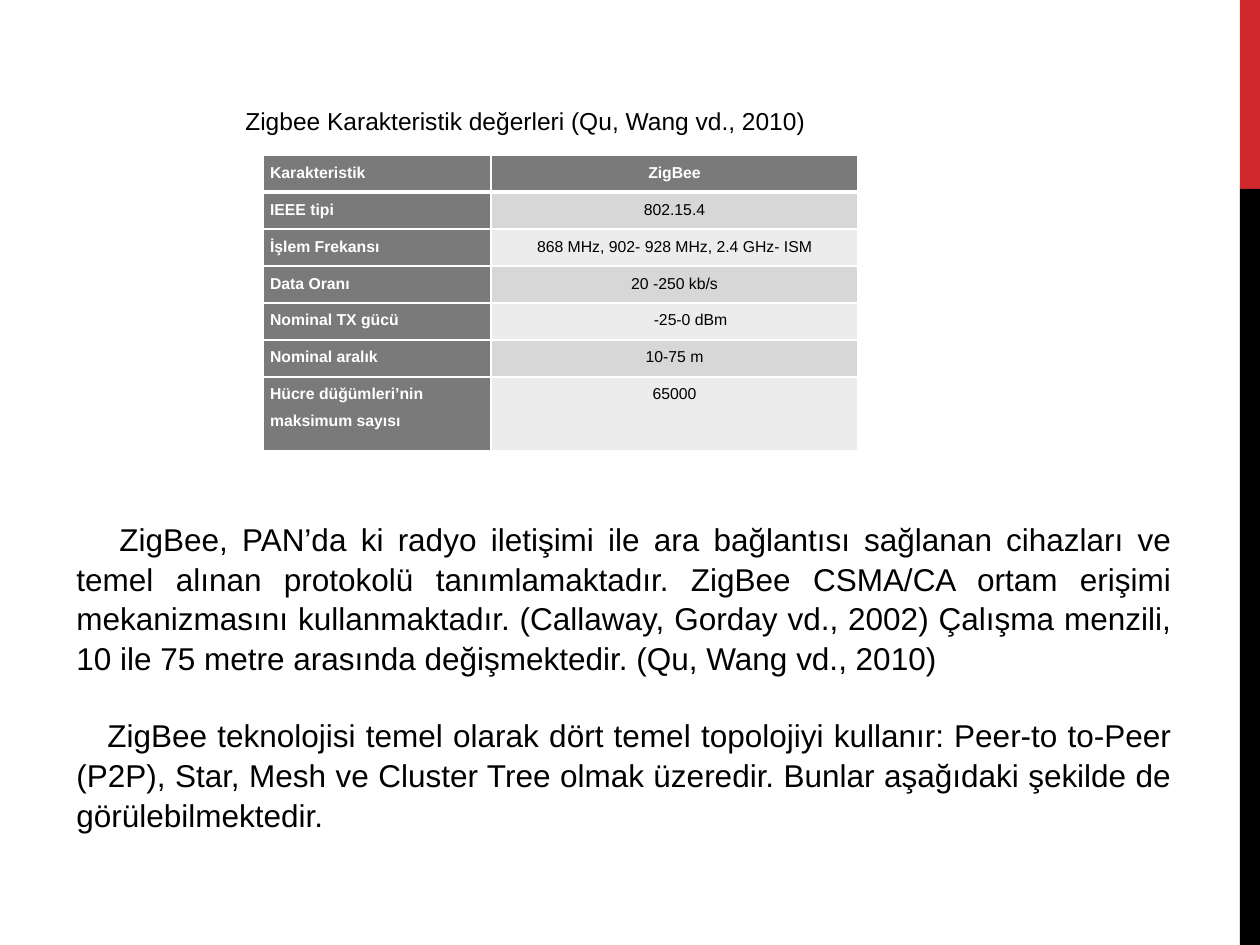
from dataclasses import dataclass
from lxml import etree
from pptx import Presentation
from pptx.dml.color import RGBColor
from pptx.enum.shapes import MSO_SHAPE
from pptx.enum.text import PP_ALIGN
from pptx.oxml.ns import qn
from pptx.util import Pt

RECT = MSO_SHAPE.RECTANGLE
LEFT, CENTER, JUSTIFY = PP_ALIGN.LEFT, PP_ALIGN.CENTER, PP_ALIGN.JUSTIFY
PX = 914400 // 126


@dataclass(frozen=True)
class Theme:
    font: str = "Arial"
    red: str = "D1282E"
    black: str = "000000"
    white: str = "FFFFFF"
    heading: str = "7A7A7A"
    band_dark: str = "D7D7D7"
    band_light: str = "ECECEC"
    caption_size: int = 14
    body_size: int = 18
    table_size: int = 9


theme = Theme()


def style_paragraph(paragraph, size, color, align, spacing, bold=False):
    paragraph.alignment = align
    paragraph.line_spacing = spacing
    for run in paragraph.runs:
        run.font.name = theme.font
        run.font.size = Pt(size)
        run.font.bold = bold
        run.font.color.rgb = RGBColor.from_string(color)


def add_border(cell, side, width):
    line = etree.SubElement(cell._tc.get_or_add_tcPr(), qn(f"a:ln{side}"), w=str(Pt(width)))
    fill = etree.SubElement(line, qn("a:solidFill"))
    etree.SubElement(fill, qn("a:srgbClr"), val=theme.white)


prs = Presentation()
prs.slide_width, prs.slide_height = 1260 * PX, 945 * PX
slide = prs.slides.add_slide(prs.slide_layouts[6])

for top, height, color in [(0, 189, theme.red), (189, 756, theme.black)]:
    side_bar = slide.shapes.add_shape(RECT, 1240 * PX, top * PX, 20 * PX, height * PX)
    side_bar.shadow.inherit = False
    side_bar.fill.solid()
    side_bar.fill.fore_color.rgb = RGBColor.from_string(color)
    side_bar.line.fill.background()

characteristics = [
    ("Karakteristik", "ZigBee"),
    ("IEEE tipi", "802.15.4"),
    ("İşlem Frekansı", "868 MHz, 902- 928 MHz, 2.4 GHz- ISM"),
    ("Data Oranı", "20 -250 kb/s"),
    ("Nominal TX gücü", "-25-0 dBm"),
    ("Nominal aralık", "10-75 m"),
    ("Hücre düğümleri’nin maksimum sayısı", "65000"),
]
column_widths = [228, 367]
row_heights = [37] * 6 + [74]
grid = slide.shapes.add_table(
    len(characteristics), 2, 263 * PX, 155 * PX,
    sum(column_widths) * PX, sum(row_heights) * PX).table
for column, width in zip(grid.columns, column_widths):
    column.width = width * PX
for row, height in zip(grid.rows, row_heights):
    row.height = height * PX

for r, entry in enumerate(characteristics):
    for c, wording in enumerate(entry):
        is_heading = r == 0 or c == 0
        band = theme.band_dark if r % 2 else theme.band_light
        cell = grid.cell(r, c)
        cell.margin_left = cell.margin_right = 7 * PX
        cell.margin_top = cell.margin_bottom = 0
        cell.text_frame.text = wording
        style_paragraph(
            cell.text_frame.paragraphs[0], theme.table_size,
            theme.white if is_heading else theme.black,
            CENTER if c else LEFT, 1.5, is_heading)
        for side in "LRTB":
            header_edge = (r, side) in [(0, "B"), (1, "T")]
            add_border(cell, side, 3 if header_edge else 1)
        cell.fill.solid()
        cell.fill.fore_color.rgb = RGBColor.from_string(theme.heading if is_heading else band)

power_value = grid.cell(4, 1).text_frame.paragraphs[0]
power_value._p.get_or_add_pPr().set("marL", str(32 * PX))

caption = slide.shapes.add_textbox(233 * PX, 98 * PX, 630 * PX, 43 * PX).text_frame
caption.word_wrap = True
caption.text = "Zigbee Karakteristik değerleri (Qu, Wang vd., 2010)"
style_paragraph(caption.paragraphs[0], theme.caption_size, theme.black, LEFT, 1.05)

explanations = [
    (43, 0, "ZigBee, PAN’da ki radyo iletişimi ile ara bağlantısı sağlanan cihazları ve temel "
     "alınan protokolü tanımlamaktadır. ZigBee CSMA/CA ortam erişimi mekanizmasını "
     "kullanmaktadır. (Callaway, Gorday vd., 2002) Çalışma menzili, 10 ile 75 metre "
     "arasında değişmektedir. (Qu, Wang vd., 2010)"),
    (31, 21.5, "ZigBee teknolojisi temel olarak dört temel topolojiyi kullanır: Peer-to to-Peer "
     "(P2P), Star, Mesh ve Cluster Tree olmak üzeredir. Bunlar aşağıdaki şekilde de "
     "görülebilmektedir."),
]
body = slide.shapes.add_textbox(64 * PX, 512 * PX, 1120 * PX, 318 * PX).text_frame
body.word_wrap = True
body.text = "\n".join(wording for _, _, wording in explanations)
for paragraph, (indent, gap, _) in zip(body.paragraphs, explanations):
    style_paragraph(paragraph, theme.body_size, theme.black, JUSTIFY, 1.05)
    paragraph.space_before = Pt(gap)
    paragraph._p.get_or_add_pPr().set("indent", str(indent * PX))

prs.save("out.pptx")
